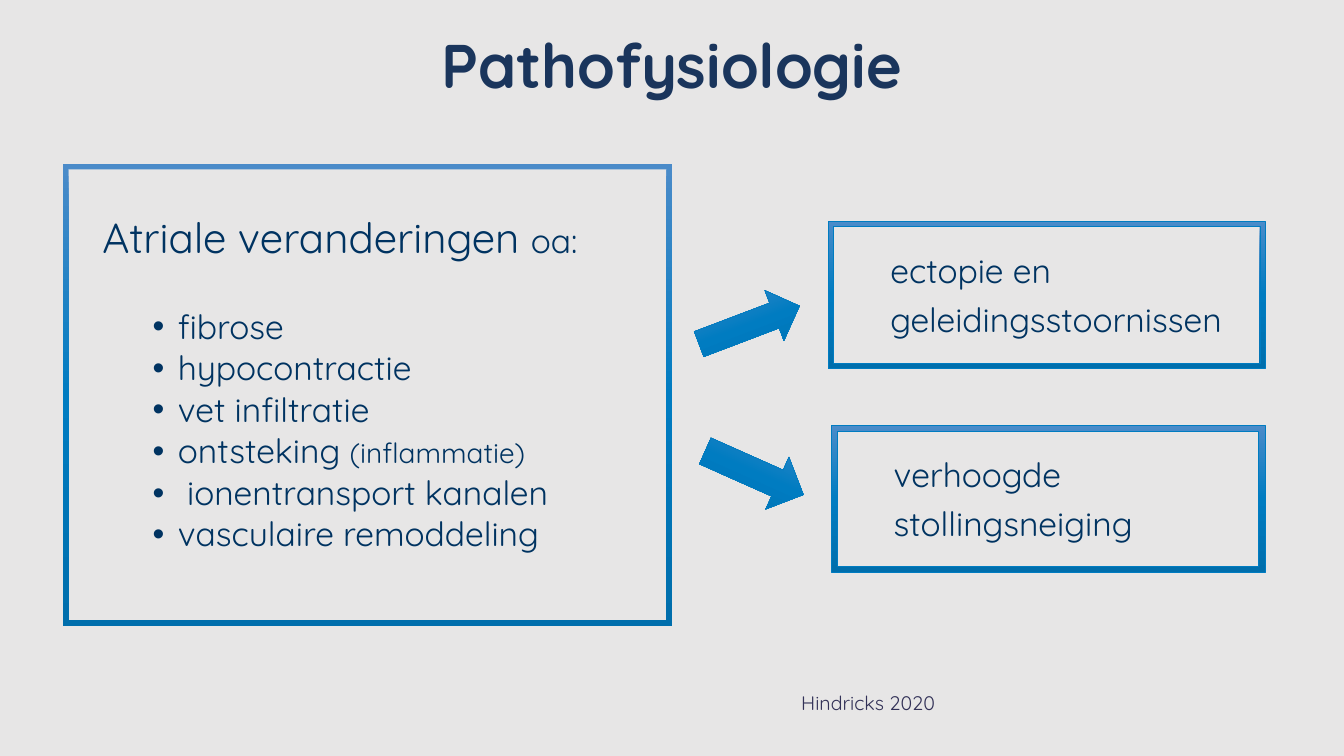
from lxml import etree
from pptx import Presentation
from pptx.dml.color import RGBColor
from pptx.enum.shapes import MSO_SHAPE
from pptx.enum.text import MSO_ANCHOR, PP_ALIGN
from pptx.oxml import parse_xml
from pptx.oxml.ns import nsdecls, qn
from pptx.util import Inches, Pt

FRAME, ARROW = MSO_SHAPE.FRAME, MSO_SHAPE.RIGHT_ARROW
MIDDLE, TOP = MSO_ANCHOR.MIDDLE, MSO_ANCHOR.TOP
CENTER, LEFT = PP_ALIGN.CENTER, PP_ALIGN.LEFT
COLUMNS, ROWS = 160, 90
UNIT = Inches(7.5) / ROWS
FONT = "Quicksand"
BACKGROUND, TITLE, BODY, CITATION = "E7E6E6", "1A355C", "003361", "323157"
OUTLINE = "007CC1"
GRADIENT = [(0, "4B8BC9"), (50, "007CC1"), (100, "006EAC")]
CHANGES = [
    [("fibrose", 24)],
    [("hypocontractie", 24)],
    [("vet infiltratie", 24)],
    [("ontsteking ", 24), ("(inflammatie)", 20)],
    [(" ionentransport kanalen", 24)],
    [("vasculaire remoddeling", 24)],
]


def color(value):
    """Turn a hex string into a colour."""
    return RGBColor.from_string(value)


def place(box):
    """Turn a box in grid units into slide lengths."""
    return [round(value * UNIT) for value in box]


def add_text_frame(slide, box, margin=0.0, anchor=TOP):
    """Add a wrapping text box and return its text frame."""
    text_frame = slide.shapes.add_textbox(*place(box)).text_frame
    text_frame.word_wrap = True
    text_frame.vertical_anchor = anchor
    text_frame.margin_left = text_frame.margin_right = Inches(margin)
    text_frame.margin_top = text_frame.margin_bottom = Inches(margin / 2)
    return text_frame


def write(paragraph, pieces, hue, spacing=1.0, before=0, bold=False, align=LEFT):
    """Fill a paragraph with (text, size) pieces."""
    paragraph.alignment = align
    paragraph.line_spacing = spacing
    paragraph.space_before = Pt(before)
    for text, size in pieces:
        run = paragraph.add_run()
        run.text = text
        run.font.name, run.font.size, run.font.bold = FONT, Pt(size), bold
        run.font.color.rgb = color(hue)


def add_bullet(paragraph):
    """Give a paragraph a hanging bullet."""
    properties = paragraph._p.get_or_add_pPr()
    properties.set("marL", str(Inches(0.75)))
    properties.set("indent", str(Inches(-0.25)))
    etree.SubElement(properties, qn("a:buFont")).set("typeface", "Arial")
    etree.SubElement(properties, qn("a:buChar")).set("char", "•")


def add_gradient_shape(slide, kind, box, outlined=True):
    """Add a preset shape with the vertical blue gradient."""
    shape = slide.shapes.add_shape(kind, *place(box))
    shape.shadow.inherit = False
    shape.fill.gradient()
    stops = "".join(
        f'<a:gs pos="{position * 1000}"><a:srgbClr val="{hue}"/></a:gs>'
        for position, hue in GRADIENT
    )
    properties = shape.element.spPr
    properties.replace(properties.find(qn("a:gradFill")), parse_xml(
        f'<a:gradFill {nsdecls("a")} rotWithShape="1"><a:gsLst>{stops}</a:gsLst>'
        '<a:lin ang="5400000" scaled="0"/></a:gradFill>'))
    if outlined:
        shape.line.color.rgb = color(OUTLINE)
        shape.line.width = Pt(0.5)
    else:
        shape.line.fill.background()
    return shape


def add_title(slide, box):
    """Place the centred slide title."""
    paragraph = add_text_frame(slide, box, 0.1, MIDDLE).paragraphs[0]
    write(paragraph, [("Pathofysiologie", 44)], TITLE, 0.9, bold=True, align=CENTER)


def add_changes(slide, box):
    """Place the framed list of atrial changes."""
    left, top, width, height = box
    add_gradient_shape(slide, FRAME, box, outlined=False).adjustments[0] = 0.012
    text_frame = add_text_frame(
        slide, (left + 3.5, top + 4.5, width - 4.5, height - 6), 0.1)
    heading = [("Atriale veranderingen ", 30), ("oa:", 24)]
    write(text_frame.paragraphs[0], heading, BODY, 1.1)
    for index, pieces in enumerate(CHANGES):
        paragraph = text_frame.add_paragraph()
        write(paragraph, pieces, BODY, 0.9, 3.75 if index else 34.5)
        add_bullet(paragraph)


def add_consequence(slide, box, lines, thickness):
    """Place a framed consequence, one paragraph per line."""
    left, top, width, height = box
    add_gradient_shape(slide, FRAME, box).adjustments[0] = thickness
    text_frame = add_text_frame(slide, (left + 7.4, top + 4, width - 7.4, height - 6))
    for index, line in enumerate(lines):
        paragraph = text_frame.add_paragraph() if index else text_frame.paragraphs[0]
        write(paragraph, [(line, 24)], BODY, 0.9, 9 if index else 0)


def add_arrow(slide, box, rotation):
    """Place a turned block arrow."""
    add_gradient_shape(slide, ARROW, box).rotation = rotation


def add_citation(slide, box):
    """Place the short citation."""
    paragraph = add_text_frame(slide, box, 0.1).paragraphs[0]
    write(paragraph, [("Hindricks 2020", 14)], CITATION)


def main():
    """Build and save the slide."""
    presentation = Presentation()
    presentation.slide_width = round(COLUMNS * UNIT)
    presentation.slide_height = round(ROWS * UNIT)
    slide = presentation.slides.add_slide(presentation.slide_layouts[6])
    slide.background.fill.solid()
    slide.background.fill.fore_color.rgb = color(BACKGROUND)
    add_title(slide, (26, 3.6, 108, 9.2))
    add_changes(slide, (7.5, 19.5, 72.5, 55))
    add_arrow(slide, (82.8, 35.5, 12.8, 6.4), 339.2)
    add_arrow(slide, (83.4, 52.9, 12.8, 6.8), 24)
    add_consequence(slide, (98.6, 26.3, 52, 17.6),
                    ["ectopie en", "geleidingsstoornissen"], 0.034)
    add_consequence(slide, (99, 50.6, 51.6, 17.6),
                    ["verhoogde", "stollingsneiging"], 0.042)
    add_citation(slide, (94.2, 81.6, 60, 6.8))
    presentation.save("out.pptx")


if __name__ == "__main__":
    main()
